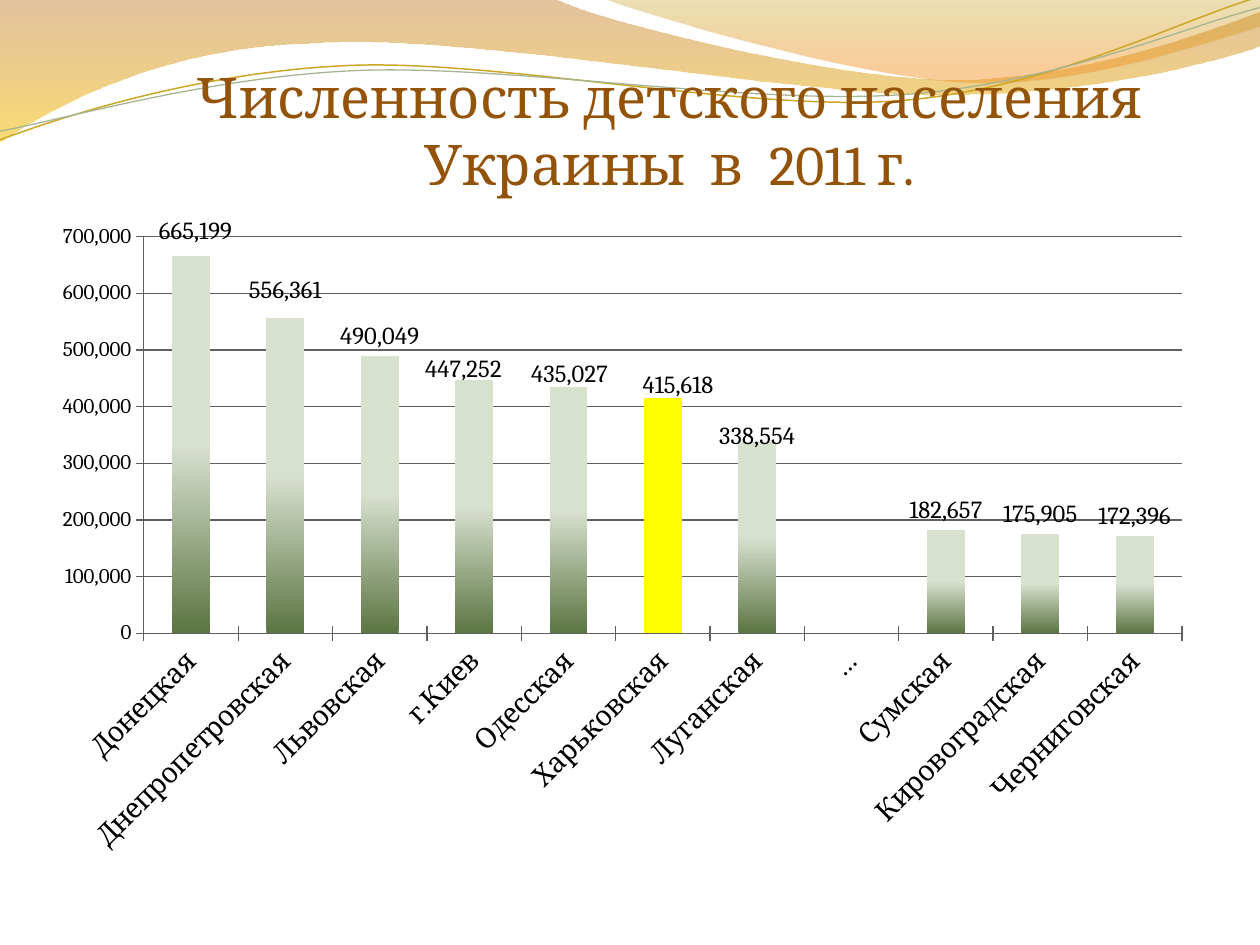
"""Build a slide with a wave banner and a column chart of child population by region."""
from dataclasses import dataclass
from math import cos, radians, sin

from lxml.etree import SubElement
from pptx import Presentation
from pptx.chart.data import CategoryChartData
from pptx.dml.color import RGBColor
from pptx.enum.chart import XL_CHART_TYPE as ChartType, XL_LABEL_POSITION as LabelPos
from pptx.enum.chart import XL_TICK_MARK as Tick
from pptx.enum.text import MSO_ANCHOR, PP_ALIGN
from pptx.oxml import parse_xml
from pptx.oxml.ns import nsdecls, qn
from pptx.util import Inches, Pt

FONT = "Cambria"
BROWN = RGBColor(0x93, 0x54, 0x0A)
BLACK = RGBColor(0, 0, 0)
GRID = RGBColor(0x60, 0x60, 0x60)
YELLOW = RGBColor(0xFF, 0xFF, 0)
DARK_GREEN = RGBColor(0x5B, 0x75, 0x43)
PALE_GREEN = RGBColor(0xD8, 0xE0, 0xCE)
RUST = RGBColor(0xC0, 0x7A, 0x28)
GOLD = RGBColor(0xF7, 0xBF, 0)
OLIVE = RGBColor(0xC0, 0x97, 0x09)
ORANGE = RGBColor(0xF5, 0x93, 0x20)
LINE_GOLD = RGBColor(0xCC, 0xA6, 0x24)
LINE_GREEN = RGBColor(0xA5, 0xB5, 0x92)
TILT = 357.3
TILT_CENTER = (4.99, 0.58)


@dataclass
class Stop:
    position: float
    color: RGBColor
    alpha: int = 100


@dataclass
class Wave:
    start: tuple
    segments: list
    stops: tuple = ()
    line: RGBColor | None = None
    width: float = 0


@dataclass
class Region:
    name: str
    value: int | None
    shift: tuple | None = None


WAVES = [
    Wave((0, 0), [(4.4, -0.01), (4.76, 0.17, 6.64, 0.63, 7.58, 0.63),
                  (8.53, 0.63, 9.58, 0.26, 10, 0.09), (10.01, 0.36),
                  (9.83, 0.44, 8.7, 0.76, 7.46, 0.75), (6.22, 0.75, 3.82, 0.28, 2.57, 0.34),
                  (1.29, 0.36, 0.46, 0.83, -0.01, 1.13), (0, 0)],
         (Stop(0, RUST, 45), Stop(1, GOLD, 55))),
    Wave((4.79, -0.01), [(5.09, 0.11, 6.82, 0.62, 7.69, 0.65),
                         (8.56, 0.69, 9.61, 0.32, 10, 0.21), (10, 0), (4.79, -0.01)],
         (Stop(0, OLIVE, 30), Stop(0.8, ORANGE, 45))),
    Wave((0, 1.11), [(0.48, 0.93, 1.58, 0.57, 2.77, 0.52), (3.95, 0.47, 5.93, 0.89, 7.13, 0.8),
                     (8.33, 0.71, 9.38, 0.15, 9.98, -0.02)], line=LINE_GOLD, width=0.85),
    Wave((0, 1.04), [(0.47, 0.96, 1.64, 0.61, 2.83, 0.56), (4.03, 0.51, 5.97, 0.84, 7.17, 0.75),
                     (8.36, 0.67, 9.41, 0.21, 10, 0.06)], line=LINE_GREEN, width=0.75),
]

REGIONS = [
    Region("Донецкая", 665199, (0.004, -0.008)),
    Region("Днепропетровская", 556361, (0, -0.012)),
    Region("Львовская", 490049),
    Region("г.Киев", 447252, (-0.009, 0.013)),
    Region("Одесская", 435027, (0.001, 0.01)),
    Region("Харьковская", 415618, (0.013, 0.01)),
    Region("Луганская", 338554, (0, 0.021)),
    Region("…", None),
    Region("Сумская", 182657),
    Region("Кировоградская", 175905),
    Region("Черниговская", 172396),
]
HIGHLIGHT = "Харьковская"


def set_gradient(fill, stops: tuple, angle: int) -> None:
    fill.gradient()
    fill.gradient_angle = angle
    for gs, stop in zip(fill.gradient_stops, stops):
        gs.position = stop.position
        gs.color.rgb = stop.color
        if stop.alpha < 100:
            clr = gs._gs.find(qn("a:srgbClr"))
            SubElement(clr, qn("a:alpha")).set("val", str(stop.alpha * 1000))


def to_emu(x: float, y: float, tilted: bool) -> tuple:
    if tilted:
        cx, cy = TILT_CENTER
        a = radians(360 - TILT)
        dx, dy = x - cx, y - cy
        x, y = cx + dx * cos(a) - dy * sin(a), cy + dx * sin(a) + dy * cos(a)
    return Inches(x), Inches(y)


def add_wave(s, wave: Wave) -> None:
    tilted = wave.line is not None
    segments = [[to_emu(*seg[i:i + 2], tilted) for i in range(0, len(seg), 2)]
                for seg in wave.segments]
    builder = s.shapes.build_freeform(*to_emu(*wave.start, tilted))
    builder.add_line_segments([seg[-1] for seg in segments], close=not tilted)
    sp = builder.convert_to_shape()
    for line, seg in zip(list(sp._element.iter(qn("a:lnTo"))), segments):
        if len(seg) == 3:
            points = "".join(f'<a:pt x="{x - sp.left}" y="{y - sp.top}"/>' for x, y in seg)
            curve = parse_xml(f'<a:cubicBezTo {nsdecls("a")}>{points}</a:cubicBezTo>')
            line.getparent().replace(line, curve)
    sp.shadow.inherit = False
    if tilted:
        sp.rotation = TILT
        sp.fill.background()
        sp.line.color.rgb = wave.line
        sp.line.width = Pt(wave.width)
    else:
        set_gradient(sp.fill, wave.stops, 270)
        sp.line.fill.background()


def format_title(s, text: str) -> None:
    title = s.shapes.title
    s.shapes._spTree.append(title._element)
    title.left, title.top = Inches(0.94), Inches(0.31)
    title.width, title.height = Inches(8.75), Inches(1.25)
    tf = title.text_frame
    tf.word_wrap = True
    tf.vertical_anchor = MSO_ANCHOR.BOTTOM
    tf.margin_left = tf.margin_right = tf.margin_bottom = 0
    tf.margin_top = Inches(0.05)
    p = tf.paragraphs[0]
    p.alignment = PP_ALIGN.CENTER
    r = p.add_run()
    r.text = text
    set_font(r.font, 32, BROWN)


def set_font(font, size: float, color: RGBColor = BLACK) -> None:
    font.name, font.size, font.bold = FONT, Pt(size), False
    font.color.rgb = color


def layout_xml(x: float, y: float, extra: str = "", head: str = ""):
    return parse_xml(f'<c:layout {nsdecls("c")}><c:manualLayout>{head}'
                     f'<c:x val="{x}"/><c:y val="{y}"/>{extra}</c:manualLayout></c:layout>')


def format_axis(axis, size: float) -> None:
    set_font(axis.tick_labels.font, size)
    axis.major_tick_mark = Tick.CROSS
    axis.minor_tick_mark = Tick.NONE
    axis.format.line.color.rgb = GRID
    axis.format.line.width = Pt(0.75)


def add_population_chart(s) -> None:
    data = CategoryChartData(number_format="#,##0")
    data.categories = [region.name for region in REGIONS]
    data.add_series("Series 1", [region.value for region in REGIONS])
    chart = s.shapes.add_chart(ChartType.COLUMN_CLUSTERED, Inches(0.23), Inches(1.64),
                               Inches(9.3), Inches(5.31), data).chart
    chart.has_title = chart.has_legend = False
    set_font(chart.font, 18)

    format_axis(chart.category_axis, 16)
    chart.category_axis._element.find(qn("c:txPr")).find(qn("a:bodyPr")).set("rot", "-2700000")
    axis = chart.value_axis
    format_axis(axis, 12)
    axis.maximum_scale = 700000
    axis.tick_labels.number_format = "#,##0"
    axis.tick_labels.number_format_is_linked = False
    axis.major_gridlines.format.line.color.rgb = GRID
    axis.major_gridlines.format.line.width = Pt(0.75)

    plot = chart.plots[0]
    plot.vary_by_categories = False
    plot.gap_width = 150
    series = plot.series[0]
    set_gradient(series.format.fill, (Stop(0, DARK_GREEN), Stop(0.5, PALE_GREEN)), 90)
    labels = series.data_labels
    labels.show_value = True
    labels.number_format, labels.number_format_is_linked = "#,##0", False
    labels.position = LabelPos.OUTSIDE_END
    set_font(labels.font, 14)
    for i, region in enumerate(REGIONS):
        if region.name == HIGHLIGHT:
            fill = series.points[i].format.fill
            fill.solid()
            fill.fore_color.rgb = YELLOW
        if region.shift:
            label = series.points[i].data_label
            set_font(label.font, 14)
            label.position = LabelPos.OUTSIDE_END
            label._dLbl.find(qn("c:idx")).addnext(layout_xml(*region.shift))

    area = chart._chartSpace.chart.plotArea
    for old in area.findall(qn("c:layout")):
        area.remove(old)
    area.insert(0, layout_xml(0.098, 0.045, '<c:w val="0.886"/><c:h val="0.593"/>',
                              '<c:layoutTarget val="inner"/>'
                              '<c:xMode val="edge"/><c:yMode val="edge"/>'))


def main() -> None:
    prs = Presentation()
    prs.slide_width, prs.slide_height = Inches(10), Inches(7.5)
    s = prs.slides.add_slide(prs.slide_layouts[5])
    for wave in WAVES:
        add_wave(s, wave)
    format_title(s, "Численность детского населения Украины  в  2011 г.")
    add_population_chart(s)
    prs.save("out.pptx")


if __name__ == "__main__":
    main()
